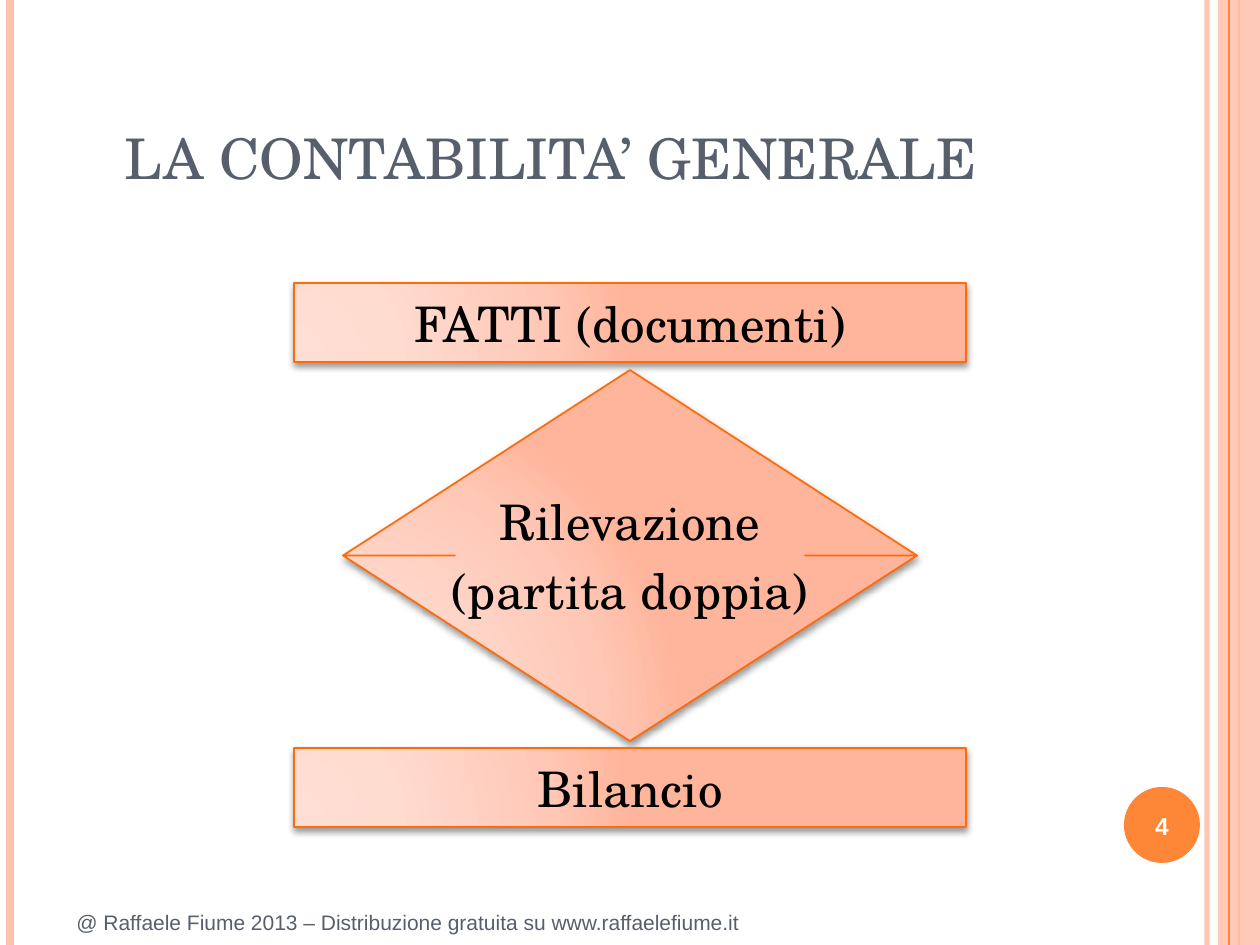
from typing import NamedTuple

from pptx import Presentation
from pptx.dml.color import RGBColor
from pptx.enum.shapes import MSO_CONNECTOR as Connector, MSO_SHAPE as Preset
from pptx.enum.text import MSO_ANCHOR as Anchor, PP_ALIGN as Align
from pptx.oxml import parse_xml
from pptx.oxml.ns import nsdecls, qn
from pptx.util import Emu, Pt

EMU_PER_PX = 914400 / 126
WIDTH, HEIGHT = 1260, 945
SERIF, SANS = "TeX Gyre Schola", "Arial"
ORANGE, PEACH, SLATE = "FE8637", "FEC3AE", "575F6D"
BLACK, WHITE, OUTLINE = "000000", "FFFFFF", "FF6B0A"
GRADIENT = ((0, "FFDED5"), (30, "FFDBD0"), (75, "FFC8B6"), (100, "FFB59B"))
ARROW_HEAD, ARROW_SHAFT = 0.32, 0.61


class Box(NamedTuple):
    left: int
    top: int
    width: int
    height: int


class Style(NamedTuple):
    font: str
    size: int
    color: str
    bold: bool = False
    align: Align = Align.LEFT
    anchor: Anchor = Anchor.MIDDLE
    spaced: bool = True


class Stripe(NamedTuple):
    x: int
    color: str
    weight: float
    opacity: int = 100


class Block(NamedTuple):
    preset: Preset
    box: Box
    lines: tuple[str, ...]
    adjustments: tuple[float, ...] = ()


class Label(NamedTuple):
    box: Box
    text: str
    style: Style


BLOCK_STYLE = Style(SERIF, 28, BLACK, align=Align.CENTER)
STRIPES_BEHIND = (
    Stripe(1207, PEACH, 3, 93),
    Stripe(10, PEACH, 4.5),
    Stripe(1239, ORANGE, 1.5),
)
STRIPE_IN_FRONT = Stripe(1229, ORANGE, 0.75)
LABELS = (
    Label(Box(64, 900, 1032, 45),
          "@ Raffaele Fiume 2013 – Distribuzione gratuita su www.raffaelefiume.it",
          Style(SANS, 12, SLATE)),
    Label(Box(112, 102, 1102, 95), "LA CONTABILITA’ GENERALE",
          Style(SERIF, 32, SLATE, anchor=Anchor.BOTTOM, spaced=False)),
    Label(Box(1120, 790, 84, 72), "4",
          Style(SANS, 14, WHITE, bold=True, align=Align.CENTER)),
)
BLOCKS = (
    Block(Preset.RECTANGLE, Box(294, 283, 672, 79), ("FATTI (documenti)",)),
    Block(Preset.UP_DOWN_ARROW, Box(343, 370, 574, 371),
          ("Rilevazione", "(partita doppia)"), (ARROW_HEAD, ARROW_SHAFT)),
    Block(Preset.RECTANGLE, Box(294, 748, 672, 79), ("Bilancio",)),
)


def px(length: int) -> Emu:
    return Emu(round(length * EMU_PER_PX))


def place(box: Box) -> list[Emu]:
    return [px(length) for length in box]


def rgb(color: str) -> RGBColor:
    return RGBColor.from_string(color)


def set_opacity(element, percent: int) -> None:
    """Make the solid colour inside a fill or line element translucent."""
    for color in element.iter(qn("a:srgbClr")):
        color.append(parse_xml(f'<a:alpha {nsdecls("a")} val="{percent * 1000}"/>'))


def add_stripe(page, stripe: Stripe) -> None:
    line = page.shapes.add_connector(
        Connector.STRAIGHT, px(stripe.x), 0, px(stripe.x), px(HEIGHT))
    line.line.color.rgb = rgb(stripe.color)
    line.line.width = Pt(stripe.weight)
    properties = line._element.spPr
    properties.append(parse_xml(f'<a:effectLst {nsdecls("a")}/>'))
    if stripe.opacity < 100:
        set_opacity(properties, stripe.opacity)


def add_plain_shape(page, preset: Preset, box: Box, color: str, opacity: int = 100) -> None:
    shape = page.shapes.add_shape(preset, *place(box))
    shape.shadow.inherit = False
    shape.fill.solid()
    shape.fill.fore_color.rgb = rgb(color)
    shape.line.fill.background()
    if opacity < 100:
        set_opacity(shape._element.spPr, opacity)


def write(frame, lines: tuple[str, ...], style: Style, wrap: bool) -> None:
    frame.word_wrap = wrap
    frame.vertical_anchor = style.anchor
    for index, line in enumerate(lines):
        para = frame.add_paragraph() if index else frame.paragraphs[0]
        para.text = line
        para.alignment = style.align
        if style.spaced:
            para.space_before = Pt(style.size * 0.2)
        para.font.name = style.font
        para.font.size = Pt(style.size)
        para.font.bold = style.bold
        para.font.color.rgb = rgb(style.color)


def add_label(page, label: Label) -> None:
    text_box = page.shapes.add_textbox(*place(label.box))
    write(text_box.text_frame, (label.text,), label.style, wrap=True)


def apply_glow_gradient(shape) -> None:
    """Fill with the circular peach gradient, lightest at the lower left."""
    stops = "".join(
        f'<a:gs pos="{position * 1000}"><a:srgbClr val="{color}"/></a:gs>'
        for position, color in GRADIENT)
    shape.fill.background()
    properties = shape._element.spPr
    properties.replace(properties.find(qn("a:noFill")), parse_xml(
        f'<a:gradFill {nsdecls("a")} rotWithShape="1"><a:gsLst>{stops}</a:gsLst>'
        '<a:path path="circle"><a:fillToRect l="5000" t="100000" r="120000" b="10000"/>'
        '</a:path></a:gradFill>'))


def apply_drop_shadow(shape) -> None:
    shape.shadow.inherit = False
    shape._element.spPr.find(qn("a:effectLst")).append(parse_xml(
        f'<a:outerShdw {nsdecls("a")} blurRad="{Pt(4)}" dist="{Pt(2)}" dir="5400000" '
        f'rotWithShape="0"><a:srgbClr val="{BLACK}"><a:alpha val="40000"/></a:srgbClr>'
        '</a:outerShdw>'))


def add_block(page, block: Block) -> None:
    shape = page.shapes.add_shape(block.preset, *place(block.box))
    for index, value in enumerate(block.adjustments):
        shape.adjustments[index] = value
    apply_glow_gradient(shape)
    shape.line.color.rgb = rgb(OUTLINE)
    shape.line.width = Pt(1)
    apply_drop_shadow(shape)
    write(shape.text_frame, block.lines, BLOCK_STYLE, wrap=False)


def main() -> None:
    deck = Presentation()
    deck.slide_width, deck.slide_height = px(WIDTH), px(HEIGHT)
    page = deck.slides.add_slide(deck.slide_layouts[6])
    for stripe in STRIPES_BEHIND:
        add_stripe(page, stripe)
    add_plain_shape(page, Preset.RECTANGLE, Box(1218, 0, 42, HEIGHT), PEACH, 87)
    add_stripe(page, STRIPE_IN_FRONT)
    add_plain_shape(page, Preset.OVAL, Box(1124, 787, 76, 76), ORANGE)
    for label in LABELS:
        add_label(page, label)
    for block in BLOCKS:
        add_block(page, block)
    deck.save("out.pptx")


if __name__ == "__main__":
    main()
